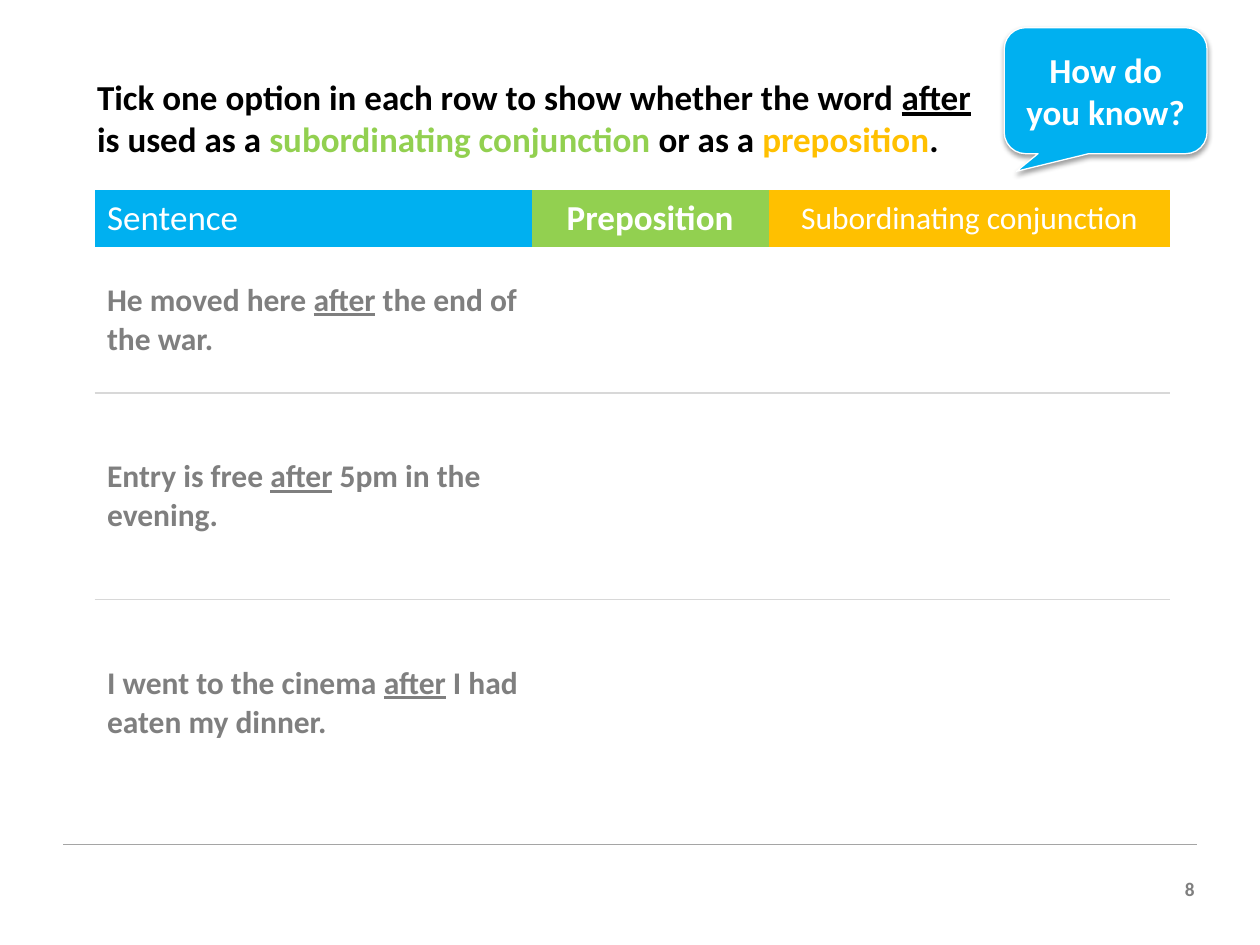
from lxml import etree
from pptx import Presentation, util as u
from pptx.dml.color import RGBColor
from pptx.enum import shapes, text
from pptx.oxml import parse_xml
from pptx.oxml.ns import nsdecls, qn

BLUE = RGBColor(0x00, 0xB0, 0xF0)
GREEN = RGBColor(0x92, 0xD0, 0x50)
AMBER = RGBColor(0xFF, 0xC0, 0x00)
GREY = RGBColor(0x7F, 0x7F, 0x7F)
RULE = RGBColor(0xA5, 0xA5, 0xA5)
ROW_RULE = RGBColor(0xD8, 0xD8, 0xD8)
WHITE = RGBColor(0xFF, 0xFF, 0xFF)
BLACK = RGBColor(0x00, 0x00, 0x00)
W, H = u.Inches(10), u.Inches(7.5)
NO_STYLE = "{2D5ABB26-0587-4C30-8999-92F81FD0307C}"


def box(left, top, width, height):
    """Turn inches into a box of lengths."""
    return [u.Inches(v) for v in (left, top, width, height)]


def style(p, size, color, bold=True, align=text.PP_ALIGN.LEFT):
    p.alignment = align
    p.font.name, p.font.size, p.font.bold = "Calibri", u.Pt(size), bold
    p.font.color.rgb = color


def add_runs(p, runs):
    """Add (words, colour or None, underlined) runs to a paragraph."""
    for words, color, underline in runs:
        r = p.add_run()
        r.text = words
        if color is not None:
            r.font.color.rgb = color
        if underline:
            r.font.underline = True


def add_title(s, area):
    sp = s.shapes.title
    sp.left, sp.top, sp.width, sp.height = area
    tf = sp.text_frame
    tf.word_wrap, tf.auto_size = True, text.MSO_AUTO_SIZE.NONE
    tf.vertical_anchor = text.MSO_ANCHOR.TOP
    p = tf.paragraphs[0]
    add_runs(p, [
        ("Tick one option in each row to show whether the word ", None, False),
        ("after", None, True),
        (" is used as a ", None, False),
        ("subordinating conjunction ", GREEN, False),
        ("or as a ", None, False),
        ("preposition", AMBER, False),
        (".", None, False),
    ])
    style(p, 20, BLACK)


def add_callout(s, area):
    sp = s.shapes.add_shape(shapes.MSO_SHAPE.ROUNDED_RECTANGULAR_CALLOUT, *area)
    for i, value in enumerate((-0.44, 0.64, 0.17)):
        sp.adjustments[i] = value
    sp.fill.solid()
    sp.fill.fore_color.rgb = BLUE
    sp.line.color.rgb, sp.line.width = WHITE, u.Pt(0.75)
    # Soft shadow straight below
    sp.shadow.inherit = False
    effects = sp._element.spPr.find(qn("a:effectLst"))
    effects.append(parse_xml(
        f'<a:outerShdw {nsdecls("a")} blurRad="{u.Pt(3.1)}" dist="{u.Pt(1.6)}" '
        'dir="5400000" rotWithShape="0"><a:srgbClr val="000000">'
        '<a:alpha val="38000"/></a:srgbClr></a:outerShdw>'))
    tf = sp.text_frame
    tf.word_wrap, tf.vertical_anchor = True, text.MSO_ANCHOR.MIDDLE
    p = tf.paragraphs[0]
    p.text = "How do you know?"
    style(p, 20, WHITE, align=text.PP_ALIGN.CENTER)


def add_border(cell, side):
    cell._tc.get_or_add_tcPr().append(parse_xml(
        f'<a:{side} {nsdecls("a")} w="{u.Pt(1)}"><a:solidFill>'
        f'<a:srgbClr val="{ROW_RULE}"/></a:solidFill></a:{side}>'))


def fill_cell(cell, color):
    cell.fill.solid()
    cell.fill.fore_color.rgb = color
    cell.vertical_anchor = text.MSO_ANCHOR.MIDDLE


def add_sentence_table(s, area):
    headers = [
        ("Sentence", BLUE, 20, False, text.PP_ALIGN.LEFT),
        ("Preposition", GREEN, 20, True, text.PP_ALIGN.CENTER),
        ("Subordinating conjunction", AMBER, 18, False, text.PP_ALIGN.CENTER),
    ]
    sentences = [
        ("He moved here ", " the end of the war."),
        ("Entry is free ", " 5pm in the evening."),
        ("I went to the cinema ", " I had eaten my dinner."),
    ]
    rows = len(sentences) + 1
    table = s.shapes.add_table(rows, len(headers), *area).table
    table.first_row = table.horz_banding = False
    table._tbl.tblPr.find(qn("a:tableStyleId")).text = NO_STYLE
    for column, width in zip(table.columns, (3.47, 1.88, 3.19)):
        column.width = u.Inches(width)
    for row, height in zip(table.rows, (0.45, 1.16, 1.64, 1.64)):
        row.height = u.Inches(height)

    # Header row
    for c, (words, color, size, bold, align) in enumerate(headers):
        cell = table.cell(0, c)
        fill_cell(cell, color)
        p = cell.text_frame.paragraphs[0]
        p.text = words
        style(p, size, WHITE, bold, align)

    # Sentence rows, ruled between one another
    for r, (before, after) in enumerate(sentences, 1):
        for cell in table.rows[r].cells:
            if r > 1:
                add_border(cell, "lnT")
            if r < rows - 1:
                add_border(cell, "lnB")
            fill_cell(cell, WHITE)
        p = table.cell(r, 0).text_frame.paragraphs[0]
        add_runs(p, [(before, None, False), ("after", None, True),
                     (after, None, False)])
        style(p, 18, GREY)


def add_footer(s, area):
    """Rule along the top of the area, page number at its right."""
    left, top, width, height = area
    line = s.shapes.add_connector(shapes.MSO_CONNECTOR.STRAIGHT,
                                  left, top, left + width, top)
    line.line.color.rgb, line.line.width = RULE, u.Pt(0.75)
    etree.SubElement(line._element.spPr, qn("a:effectLst"))
    number_w = u.Inches(0.38)
    sp = s.shapes.add_textbox(left + width + u.Inches(0.08) - number_w,
                              top + height - u.Inches(0.29),
                              number_w, u.Inches(0.29))
    sp.text_frame.word_wrap = True
    p = sp.text_frame.paragraphs[0]
    p.text = "8"
    style(p, 11, GREY, align=text.PP_ALIGN.RIGHT)


def main():
    prs = Presentation()
    prs.slide_width, prs.slide_height = W, H
    s = prs.slides.add_slide(prs.slide_layouts[5])
    add_footer(s, box(0.5, 6.7, 9, 0.5))
    add_sentence_table(s, box(0.75, 1.51, 8.54, 4.89))
    add_title(s, box(0.67, 0.55, 7.29, 0.77))
    add_callout(s, box(7.97, 0.22, 1.61, 1))
    prs.save("out.pptx")


if __name__ == "__main__":
    main()
